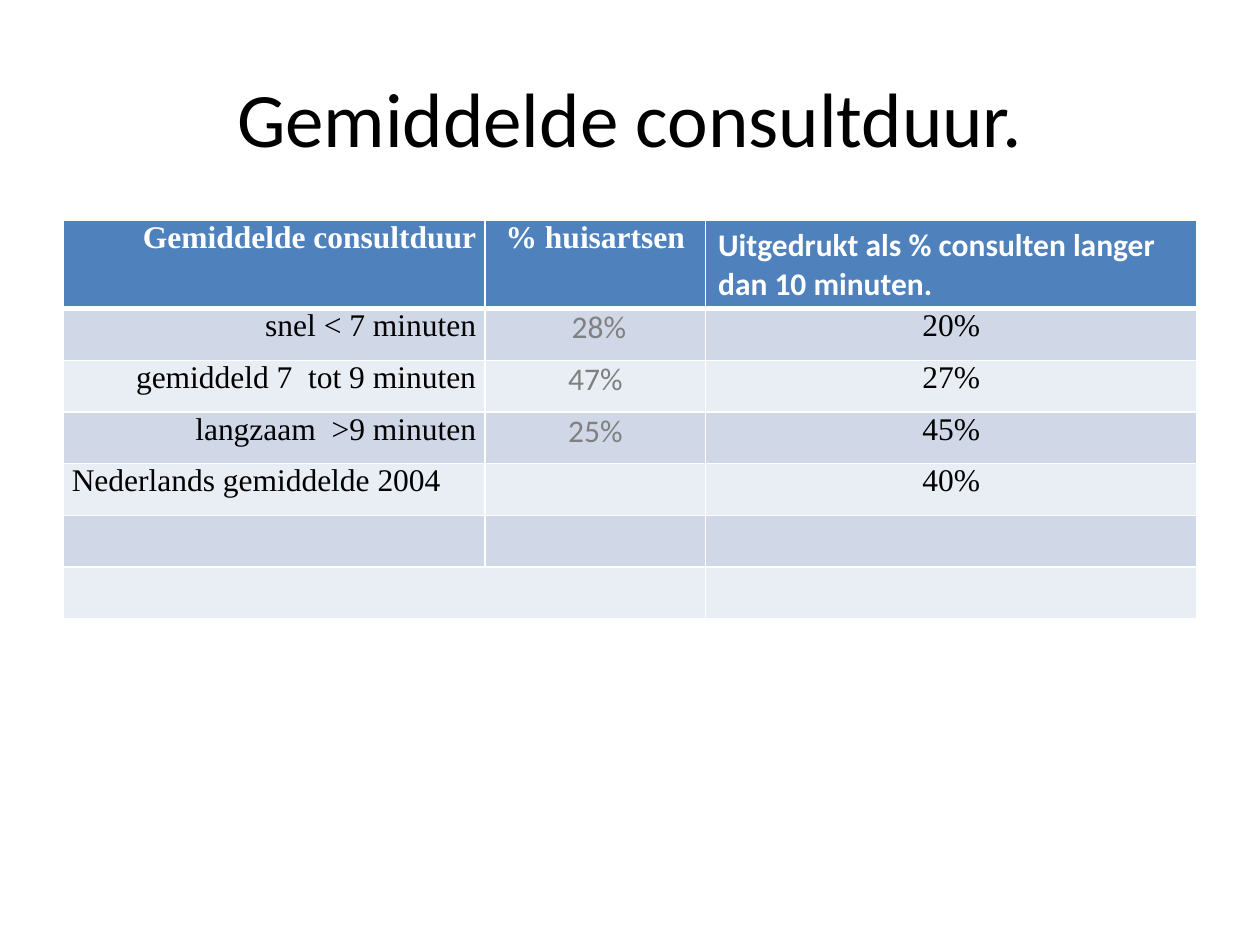
from lxml import etree
from pptx import Presentation
from pptx.dml.color import RGBColor
from pptx.enum.text import MSO_ANCHOR, PP_ALIGN
from pptx.oxml.ns import qn
from pptx.util import Inches, Pt

LEFT, CENTER, RIGHT = PP_ALIGN.LEFT, PP_ALIGN.CENTER, PP_ALIGN.RIGHT
MIDDLE = MSO_ANCHOR.MIDDLE
SANS, SERIF = "Calibri", "Times New Roman"
BLACK, WHITE, GRAY = "000000", "FFFFFF", "808080"
HEADER_FILL = "4F81BD"
BAND_FILLS = ("D0D8E8", "E9EDF4")
THIN, THICK = 1, 3

COLUMN_WIDTHS = (3.35, 1.75, 3.9)
COLUMN_ALIGNS = (RIGHT, CENTER, CENTER)
BODY_STYLES = ((SERIF, BLACK), (SANS, GRAY), (SERIF, BLACK))
HEADER_FONTS = (SERIF, SERIF, SANS)
HEADER_HEIGHT, BODY_HEIGHT = 0.7, 0.41
HEADINGS = (
    "Gemiddelde consultduur",
    "% huisartsen",
    "Uitgedrukt als % consulten langer dan 10 minuten.",
)
DURATIONS = (
    (" snel < 7 minuten", " 28%", "20%"),
    (" gemiddeld 7  tot 9 minuten", "47%", "27%"),
    (" langzaam  >9 minuten", "25%", "45%"),
    ("Nederlands gemiddelde 2004", "", "40%"),
    ("", "", ""),
    ("", "", ""),
)
AVERAGE_ROW = 4


def color(value):
    return RGBColor.from_string(value)


class SlideBuilder:
    """Holds the style and the current slide and adds elements to it."""

    def __init__(self, presentation):
        self.slide = presentation.slides.add_slide(presentation.slide_layouts[6])

    def add_text(self, frame, text, size, font, ink, align, bold=False):
        paragraph = frame.paragraphs[0]
        paragraph.alignment = align
        run = paragraph.add_run()
        run.text = text
        run.font.size = Pt(size)
        run.font.name = font
        run.font.bold = bold
        run.font.color.rgb = color(ink)

    def title(self, text, left, top, width, height):
        box = self.slide.shapes.add_textbox(
            Inches(left), Inches(top), Inches(width), Inches(height)
        )
        box.text_frame.word_wrap = True
        box.text_frame.vertical_anchor = MIDDLE
        self.add_text(box.text_frame, text, 44, SANS, BLACK, CENTER)

    def table(self, left, top, widths, heights):
        table = self.slide.shapes.add_table(
            len(heights), len(widths), Inches(left), Inches(top),
            Inches(sum(widths)), Inches(sum(heights)),
        ).table
        for column, width in zip(table.columns, widths):
            column.width = Inches(width)
        for row, height in zip(table.rows, heights):
            row.height = Inches(height)
        return table

    def cell(self, cell, fill, top=THIN, bottom=THIN):
        cell.fill.solid()
        cell.fill.fore_color.rgb = color(fill)
        properties = cell._tc.get_or_add_tcPr()
        sides = (("a:lnL", THIN), ("a:lnR", THIN), ("a:lnT", top), ("a:lnB", bottom))
        for position, (tag, weight) in enumerate(sides):
            line = etree.Element(qn(tag), w=str(Pt(weight)))
            solid = etree.SubElement(line, qn("a:solidFill"))
            etree.SubElement(solid, qn("a:srgbClr"), val=WHITE)
            properties.insert(position, line)

    def cell_text(self, cell, text, font, ink, align, bold=False, tight=True):
        if tight:
            cell.margin_left = cell.margin_right = Inches(0.07)
            cell.margin_top = cell.margin_bottom = 0
        self.add_text(cell.text_frame, text, 18, font, ink, align, bold)


def main():
    presentation = Presentation()
    presentation.slide_width = Inches(10)
    presentation.slide_height = Inches(7.5)
    builder = SlideBuilder(presentation)
    builder.title("Gemiddelde consultduur.", 0.5, 0.3, 9, 1.25)

    heights = [HEADER_HEIGHT] + [BODY_HEIGHT] * len(DURATIONS)
    durations = builder.table(0.5, 1.75, COLUMN_WIDTHS, heights)
    for column, heading in enumerate(HEADINGS):
        cell = durations.cell(0, column)
        last = column == len(HEADINGS) - 1
        builder.cell(cell, HEADER_FILL, bottom=THICK)
        builder.cell_text(
            cell, heading, HEADER_FONTS[column], WHITE,
            LEFT if last else COLUMN_ALIGNS[column], bold=True, tight=not last,
        )

    for row, values in enumerate(DURATIONS, start=1):
        for column, value in enumerate(values):
            cell = durations.cell(row, column)
            builder.cell(cell, BAND_FILLS[(row - 1) % 2], top=THICK if row == 1 else THIN)
            if value:
                average_label = row == AVERAGE_ROW and column == 0
                align = LEFT if average_label else COLUMN_ALIGNS[column]
                builder.cell_text(cell, value, *BODY_STYLES[column], align)

    last_row = len(DURATIONS)
    durations.cell(last_row, 0).merge(durations.cell(last_row, 1))
    presentation.save("out.pptx")


if __name__ == "__main__":
    main()
